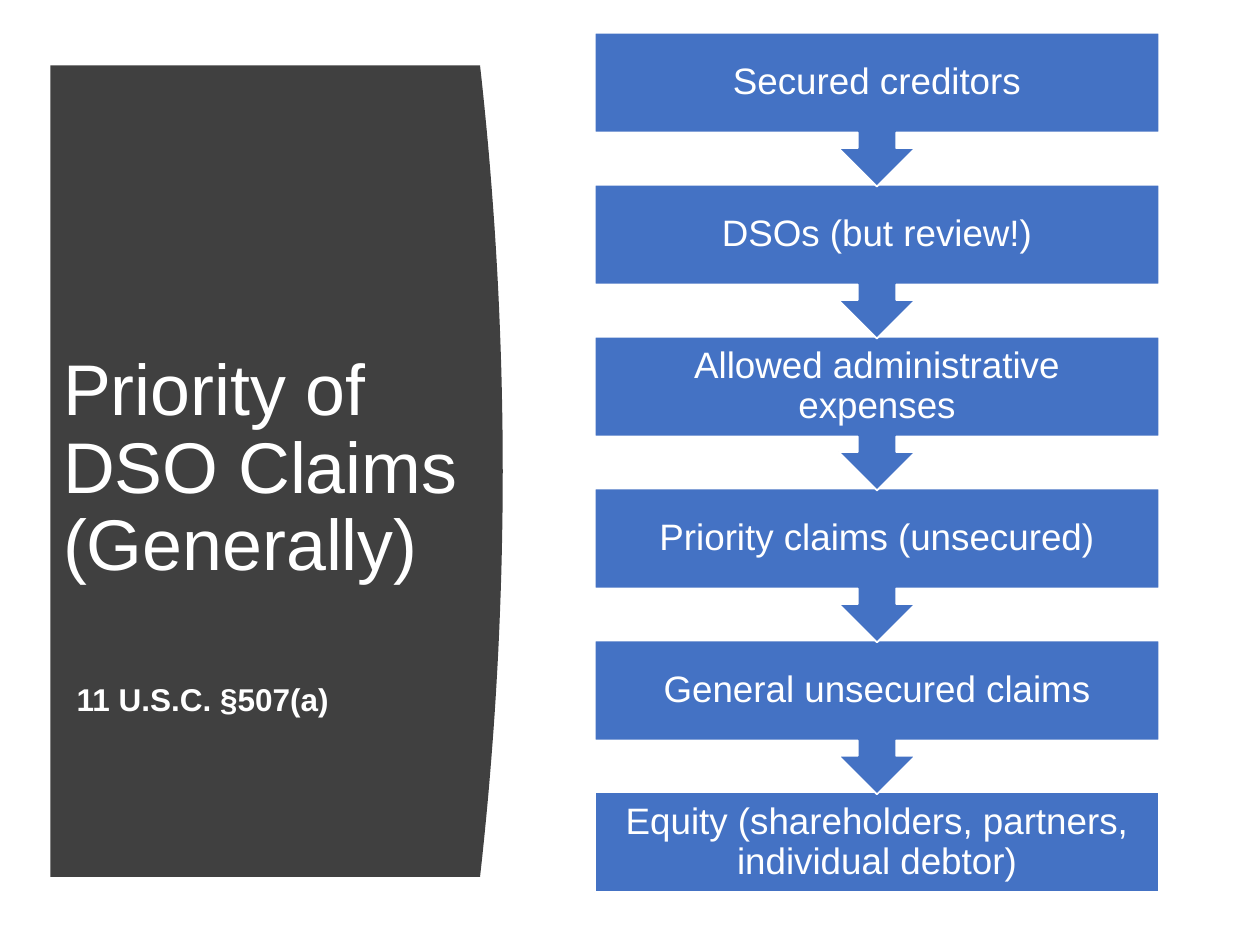
from dataclasses import dataclass

from pptx import Presentation
from pptx.dml.color import RGBColor
from pptx.enum import shapes, text
from pptx.util import Inches, Pt

TITLE = "Priority of DSO Claims (Generally)"
CITATION = "11 U.S.C. §507(a)"
PRIORITIES = [
    "Secured creditors",
    "DSOs (but review!)",
    "Allowed administrative expenses",
    "Priority claims (unsecured)",
    "General unsecured claims",
    "Equity (shareholders, partners, individual debtor)",
]


@dataclass(frozen=True)
class Theme:
    font: str = "Arial"
    panel: RGBColor = RGBColor(0x40, 0x40, 0x40)
    box: RGBColor = RGBColor(0x44, 0x72, 0xC4)
    white: RGBColor = RGBColor(0xFF, 0xFF, 0xFF)
    title_size: int = 41
    citation_size: int = 18
    box_size: int = 21


THEME = Theme()

# Inches
PANEL_LEFT, PANEL_TOP, PANEL_BOTTOM = 0.4, 0.52, 6.96
PANEL_EDGE, PANEL_BULGE = 3.81, 0.18
CURVE_STEPS = 40
BOX_LEFT, BOX_TOP, BOX_WIDTH, BOX_HEIGHT = 4.72, 0.26, 4.48, 0.79
CALLOUT_HEIGHT, PITCH, BOX_INSET = 1.22, 1.206, 0.16


def write(tf, content, size, align, bold=False):
    tf.text = content
    p = tf.paragraphs[0]
    p.alignment = align
    p.line_spacing = 0.9
    p.font.name = THEME.font
    p.font.size = Pt(size)
    p.font.bold = bold
    p.font.color.rgb = THEME.white


def add_panel(slide):
    """Draw the dark panel whose right side is a shallow parabola."""
    points = [(PANEL_LEFT, PANEL_TOP)]
    for i in range(CURVE_STEPS + 1):
        t = i / CURVE_STEPS
        x = PANEL_EDGE + PANEL_BULGE * (1 - (2 * t - 1) ** 2)
        points.append((x, PANEL_TOP + t * (PANEL_BOTTOM - PANEL_TOP)))
    points.append((PANEL_LEFT, PANEL_BOTTOM))
    points = [(Inches(x), Inches(y)) for x, y in points]
    builder = slide.shapes.build_freeform(*points[0], scale=1.0)
    builder.add_line_segments(points[1:], close=True)
    sp = builder.convert_to_shape()
    sp.shadow.inherit = False
    sp.fill.solid()
    sp.fill.fore_color.rgb = THEME.panel
    sp.line.fill.background()


def add_title(slide):
    title = slide.shapes.title
    title.left, title.top = Inches(PANEL_LEFT), Inches(1.11)
    title.width, title.height = Inches(3.59), Inches(5.24)
    tf = title.text_frame
    tf.auto_size = text.MSO_AUTO_SIZE.NONE
    tf.vertical_anchor = text.MSO_ANCHOR.MIDDLE
    write(tf, TITLE, THEME.title_size, text.PP_ALIGN.LEFT)
    # Lift the title above the panel
    tree = slide.shapes.element
    tree.remove(title.element)
    tree.append(title.element)


def add_citation(slide):
    box = slide.shapes.add_textbox(Inches(0.51), Inches(5.35), Inches(2.34), Inches(0.4))
    tf = box.text_frame
    tf.word_wrap = False
    tf.auto_size = text.MSO_AUTO_SIZE.SHAPE_TO_FIT_TEXT
    write(tf, CITATION, THEME.citation_size, text.PP_ALIGN.LEFT, bold=True)
    tf.paragraphs[0].line_spacing = 1.0


def add_priority(slide, index):
    last = index == len(PRIORITIES) - 1
    kind = shapes.MSO_SHAPE.RECTANGLE if last else shapes.MSO_SHAPE.DOWN_ARROW_CALLOUT
    height = BOX_HEIGHT if last else CALLOUT_HEIGHT
    sp = slide.shapes.add_shape(
        kind, Inches(BOX_LEFT), Inches(BOX_TOP + index * PITCH), Inches(BOX_WIDTH), Inches(height)
    )
    sp.shadow.inherit = False
    sp.fill.solid()
    sp.fill.fore_color.rgb = THEME.box
    sp.line.color.rgb = THEME.white
    sp.line.width = Pt(1)
    tf = sp.text_frame
    tf.word_wrap = True
    tf.vertical_anchor = text.MSO_ANCHOR.MIDDLE
    tf.margin_left = tf.margin_right = Inches(BOX_INSET)
    tf.margin_top = tf.margin_bottom = 0
    write(tf, PRIORITIES[index], THEME.box_size, text.PP_ALIGN.CENTER)


def main():
    prs = Presentation()
    prs.slide_width, prs.slide_height = Inches(10), Inches(7.5)
    slide = prs.slides.add_slide(prs.slide_layouts[5])
    add_panel(slide)
    add_title(slide)
    add_citation(slide)
    # Bottom up, so each arrow tip lies over the box below it
    for index in reversed(range(len(PRIORITIES))):
        add_priority(slide, index)
    prs.save("out.pptx")


if __name__ == "__main__":
    main()
